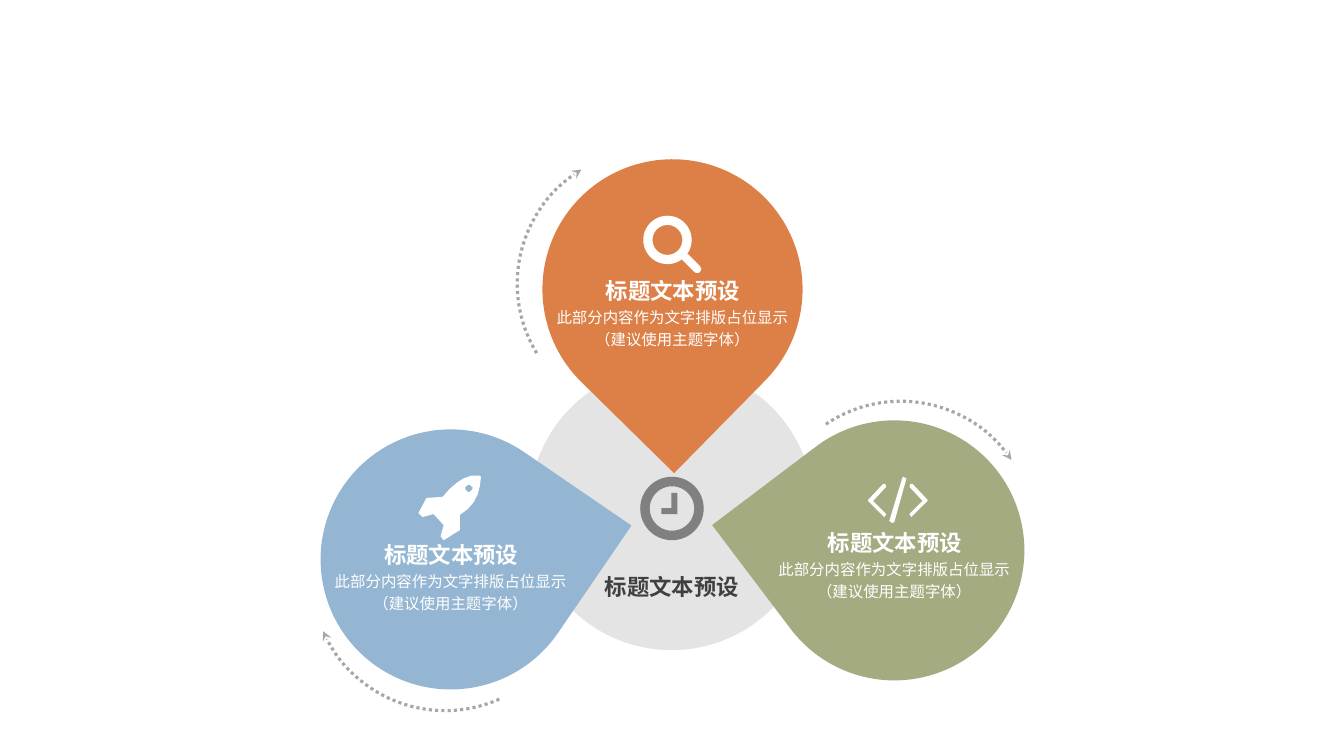
"""Build a slide of three teardrop cards around a central clock."""
from math import cos, pi, sin

from lxml import etree
from pptx import Presentation
from pptx.dml.color import RGBColor
from pptx.enum.dml import MSO_LINE
from pptx.enum.shapes import MSO_SHAPE
from pptx.enum.text import MSO_ANCHOR, PP_ALIGN
from pptx.oxml.ns import qn
from pptx.util import Inches, Pt

ARC, DROP, RING = MSO_SHAPE.ARC, MSO_SHAPE.TEAR, MSO_SHAPE.DONUT
DISC, BAR = MSO_SHAPE.OVAL, MSO_SHAPE.ROUNDED_RECTANGLE
CENTER, MIDDLE, TOP = PP_ALIGN.CENTER, MSO_ANCHOR.MIDDLE, MSO_ANCHOR.TOP
DOTS = MSO_LINE.ROUND_DOT

WHITE = RGBColor(0xFF, 0xFF, 0xFF)
SILVER = RGBColor(0xD9, 0xD9, 0xD9)
MID = RGBColor(0xA6, 0xA6, 0xA6)
GRAY = RGBColor(0x80, 0x80, 0x80)
DARK = RGBColor(0x40, 0x40, 0x40)
GREEN = RGBColor(0xA5, 0xAB, 0x81)
BLUE = RGBColor(0x94, 0xB6, 0xD2)
ORANGE = RGBColor(0xDD, 0x80, 0x47)

TITLE = "标题文本预设"
BODY = ["此部分内容作为文字排版占位显示", "（建议使用主题字体）"]
HEAD_FONT = {"name": "Calibri", "size": Pt(16), "bold": True}
BODY_FONT = {"name": "Calibri", "size": Pt(11), "bold": False}
CARD, SWEEP = 2.58, 2.65

CLOCK_HANDS = [(21, 31), (31, 31), (31, 16), (37, 16), (37, 37), (21, 37)]
CHEVRON = [(17, 40), (1, 24), (1, 23), (16, 7), (18, 7),
           (19, 9.5), (6, 24), (19, 37), (18, 39)]
SLASH = [(25, 46), (22, 44), (35, 1), (36, 0), (39, 2), (27, 45)]
ROCKET = [(31, 13), (38, 7), (44.5, 3), (52, 0.5), (61, 0), (62, 1),
          (61, 10), (59, 18), (55, 26), (49, 33), (41, 39), (41, 54),
          (25, 64), (22, 60), (25, 49), (15, 38), (4, 41), (0, 37),
          (8, 22), (24, 21)]
WINDOW = [(50 + 3.5 * cos(i * pi / 8), 12.5 + 3.5 * sin(i * pi / 8))
          for i in range(16)]


def paint(shape, color):
    """Fill a shape with one colour and drop its line and shadow."""
    shape.shadow.inherit = False
    shape.fill.solid()
    shape.fill.fore_color.rgb = color
    shape.line.fill.background()
    return shape


def preset(slide, kind, x, y, w, h, color, turn=0):
    """Add a painted preset shape."""
    shape = slide.shapes.add_shape(
        kind, Inches(x), Inches(y), Inches(w), Inches(h))
    shape.rotation = turn
    return paint(shape, color)


def outline(slide, x, y, loops, color):
    """Draw closed loops, given in hundredths of an inch from x, y."""
    pen = slide.shapes.build_freeform(*loops[0][0], scale=Inches(0.01))
    for i, loop in enumerate(loops):
        if i:
            pen.move_to(*loop[0])
        pen.add_line_segments(loop[1:], close=True)
    paint(pen.convert_to_shape(Inches(x), Inches(y)), color)


def label(slide, x, y, w, h, lines, color, style, anchor, wrap, space):
    """Add centred text whose lines share one paragraph."""
    box = slide.shapes.add_textbox(Inches(x), Inches(y), Inches(w), Inches(h))
    frame = box.text_frame
    edges = dict.fromkeys(["left", "right", "top", "bottom"], 0)
    form = {f"margin_{side}": gap for side, gap in edges.items()}
    form |= {"vertical_anchor": anchor, "word_wrap": wrap}
    for key, value in form.items():
        setattr(frame, key, value)
    para = frame.paragraphs[0]
    para.alignment, para.line_spacing = CENTER, space
    for i, line in enumerate(lines):
        if i:
            para.add_line_break()
        run = para.add_run()
        run.text = line
        for key, value in style.items():
            setattr(run.font, key, value)
        run.font.color.rgb = color


def heading(slide, x, y, color):
    """Add a bold title."""
    label(slide, x, y, 1.35, 0.27, [TITLE], color, HEAD_FONT, MIDDLE, False, 1)


def sweep(slide, x, y, turn):
    """Add a dotted quarter arc that ends in an arrowhead."""
    arc = slide.shapes.add_shape(
        ARC, Inches(x), Inches(y), Inches(SWEEP), Inches(SWEEP))
    arc.shadow.inherit = False
    arc.rotation = turn
    arc.fill.background()
    arc.line.color.rgb = MID
    arc.line.width = Pt(2.25)
    arc.line.dash_style = DOTS
    line = arc.line._get_or_add_ln()
    etree.SubElement(line, qn("a:tailEnd"), type="stealth")


def lens(slide, x, y):
    """Draw a magnifying glass."""
    ring = preset(slide, RING, x, y, 0.48, 0.48, WHITE)
    ring.adjustments[0] = 0.19
    grip = preset(slide, BAR, x + 0.35, y + 0.43, 0.25, 0.08, WHITE, 45)
    grip.adjustments[0] = 0.5


def code(slide, x, y):
    """Draw a code sign."""
    mirror = [(61 - px, py) for px, py in CHEVRON]
    outline(slide, x, y, [CHEVRON, SLASH, mirror], WHITE)


def rocket(slide, x, y):
    """Draw a rocket with a round window."""
    outline(slide, x, y, [ROCKET, WINDOW], WHITE)


def hub(slide, x, y):
    """Draw the pale central disc with its clock and title."""
    disc = preset(slide, DISC, x, y, 2.82, 2.82, SILVER)
    tint = disc.fill._xPr.find(".//" + qn("a:srgbClr"))
    etree.SubElement(tint, qn("a:alpha"), val="70000")
    ring = preset(slide, RING, x + 1.1, y + 1.1, 0.63, 0.63, GRAY)
    ring.adjustments[0] = 0.15
    outline(slide, x + 1.1, y + 1.1, [CLOCK_HANDS], GRAY)
    heading(slide, x + 0.74, y + 2.05, DARK)


def card(slide, x, y, color, turn, drop, icon, left, lift):
    """Draw a teardrop with its icon, title and text."""
    preset(slide, DROP, x, y, CARD, CARD, color, turn)
    icon(slide, x + left, y + drop - lift)
    heading(slide, x + 0.62, y + drop, WHITE)
    label(slide, x + 0.11, y + drop + 0.27, 2.36, 0.56, BODY, WHITE,
          BODY_FONT, TOP, True, 1.2)


def main():
    """Build and save the slide."""
    deck = Presentation()
    deck.slide_width, deck.slide_height = Inches(13.33), Inches(7.5)
    slide = deck.slides.add_slide(deck.slide_layouts[6])
    hub(slide, 5.25, 3.63)
    for spot in [(7.58, 4.17, GREEN, 232.9, 1.08, code, 1.02, 0.52),
                 (3.18, 4.26, BLUE, 34.4, 1.11, rocket, 0.97, 0.65),
                 (5.38, 1.58, ORANGE, 134.5, 1.17, lens, 1, 0.61)]:
        card(slide, *spot)
    for spot in [(7.61, 3.98, 325.9), (5.13, 1.49, 238.7), (3.09, 4.4, 156.1)]:
        sweep(slide, *spot)
    deck.save("out.pptx")


if __name__ == "__main__":
    main()
